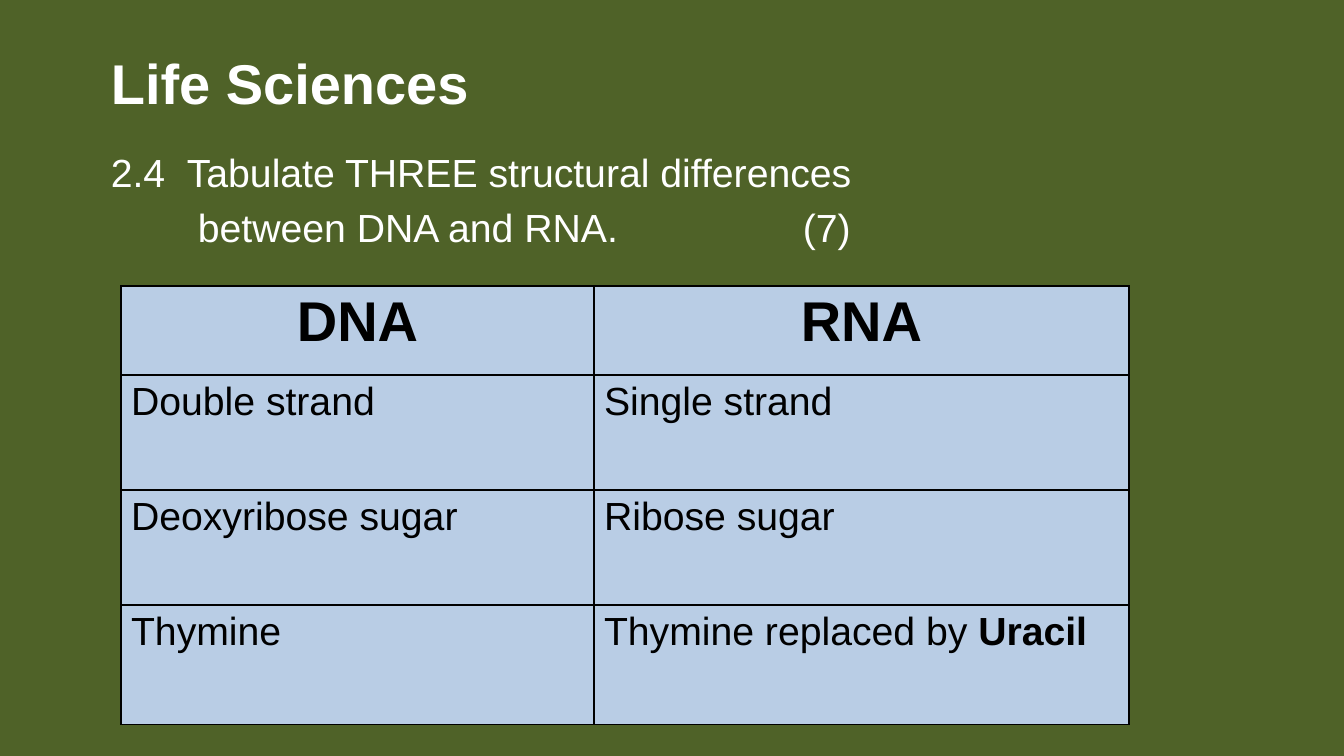
from pptx import Presentation
from pptx.dml.color import RGBColor
from pptx.enum.text import MSO_ANCHOR, PP_ALIGN
from pptx.oxml.ns import qn
from pptx.util import Pt
from lxml.etree import SubElement

MIDDLE, TOP = MSO_ANCHOR.MIDDLE, MSO_ANCHOR.TOP
LEFT, CENTER = PP_ALIGN.LEFT, PP_ALIGN.CENTER
SCALE = 914400 / 100.8
GREEN, BLUE, WHITE, BLACK = "4F6228", "B9CDE5", "FFFFFF", "000000"
HEAD, BODY = 40, 28

TASK = [
    ("2.4\tTabulate THREE structural differences", [76]),
    ("\tbetween DNA and RNA.\t(7)", [87, 692]),
]
ROWS = [
    (89, [[("DNA", True)], [("RNA", True)]]),
    (115, [[("Double strand", False)], [("Single strand", False)]]),
    (115, [[("Deoxyribose sugar", False)], [("Ribose sugar", False)]]),
    (120, [[("Thymine", False)],
           [("Thymine replaced by ", False), ("Uracil", True)]]),
]


def px(n):
    return round(n * SCALE)


def color(code):
    return RGBColor.from_string(code)


def write(para, runs, size, code, align=LEFT):
    para.alignment = align
    for text, bold in runs:
        run = para.add_run()
        run.text = text
        font = run.font
        font.name, font.size, font.bold = "Arial", Pt(size), bold
        font.color.rgb = color(code)


def space(para):
    """Set the gap above a paragraph to 20% of its line."""
    gap = SubElement(para._p.get_or_add_pPr(), qn("a:spcBef"))
    SubElement(gap, qn("a:spcPct"), val="20000")


def set_tabs(para, stops):
    tabs = SubElement(para._p.get_or_add_pPr(), qn("a:tabLst"))
    for stop in stops:
        SubElement(tabs, qn("a:tab"), pos=str(px(stop)), algn="l")


def add_box(slide, box, anchor):
    frame = slide.shapes.add_textbox(*map(px, box)).text_frame
    frame.word_wrap = True
    frame.vertical_anchor = anchor
    return frame


def add_title(slide, box):
    frame = add_box(slide, box, MIDDLE)
    write(frame.paragraphs[0], [("Life Sciences", True)], HEAD, WHITE)


def add_task(slide, box):
    frame = add_box(slide, box, TOP)
    for i, (text, stops) in enumerate(TASK):
        para = frame.add_paragraph() if i else frame.paragraphs[0]
        space(para)
        set_tabs(para, stops)
        write(para, [(text, False)], BODY, WHITE)


def add_edges(cell):
    props = cell._tc.get_or_add_tcPr()
    for side in ("lnL", "lnR", "lnT", "lnB"):
        line = SubElement(props, qn("a:" + side), w=str(Pt(1)))
        fill = SubElement(line, qn("a:solidFill"))
        SubElement(fill, qn("a:srgbClr"), val=BLACK)


def add_grid(slide, left, top, widths):
    """Place the comparison table, as tall as its rows."""
    box = (left, top, sum(widths), sum(high for high, _ in ROWS))
    table = slide.shapes.add_table(len(ROWS), len(widths), *map(px, box)).table
    for col, width in zip(table.columns, widths):
        col.width = px(width)
    for i, (high, cells) in enumerate(ROWS):
        table.rows[i].height = px(high)
        size, align = (BODY, LEFT) if i else (HEAD, CENTER)
        for j, runs in enumerate(cells):
            cell = table.cell(i, j)
            add_edges(cell)
            cell.fill.solid()
            cell.fill.fore_color.rgb = color(BLUE)
            para = cell.text_frame.paragraphs[0]
            space(para)
            write(para, runs, size, BLACK, align)


def main():
    deck = Presentation()
    deck.slide_width, deck.slide_height = px(1344), px(756)
    slide = deck.slides.add_slide(deck.slide_layouts[6])
    back = slide.background.fill
    back.solid()
    back.fore_color.rgb = color(GREEN)
    add_title(slide, (101, 31, 907, 103))
    add_task(slide, (101, 143, 789, 148))
    add_grid(slide, 121, 286, [473, 535])
    deck.save("out.pptx")


if __name__ == "__main__":
    main()
